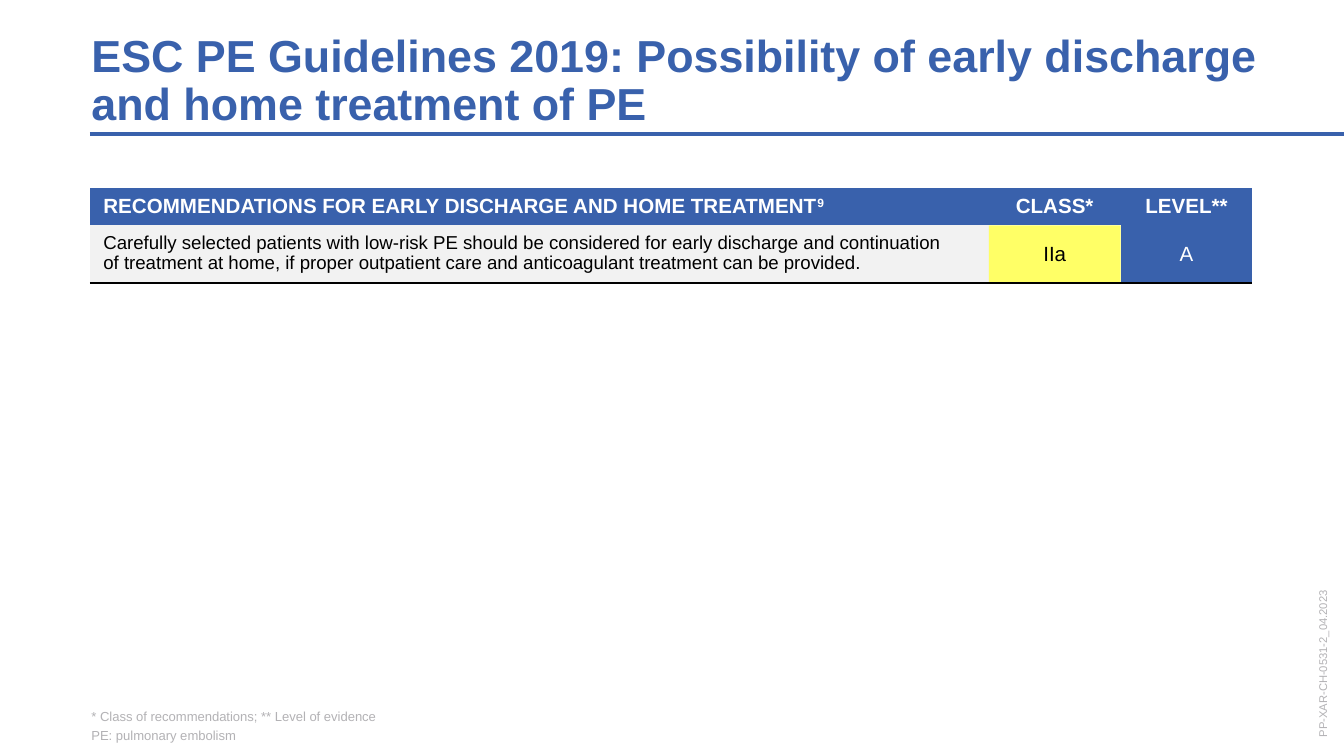
"""Build a slide with one guideline recommendation table."""
from lxml.etree import SubElement
from pptx import Presentation
from pptx.dml.color import RGBColor
from pptx.enum.shapes import MSO_CONNECTOR
from pptx.enum.text import MSO_ANCHOR, MSO_AUTO_SIZE, PP_ALIGN
from pptx.oxml import parse_xml
from pptx.oxml.ns import nsdecls, qn
from pptx.util import Pt

BLUE, GREY, WHITE, BLACK = "3961AC", "B3B2B5", "FFFFFF", "000000"


def color(code):
    return RGBColor.from_string(code)


def write(para, text, size, code, bold=False):
    for i, part in enumerate(text.split("\n")):
        if i:
            para.add_line_break()
        run = para.add_run()
        run.text = part
        run.font.name = "Arial"
        run.font.size = Pt(size)
        run.font.bold = bold
        run.font.color.rgb = color(code)
    return run


deck = Presentation()
deck.slide_width, deck.slide_height = Pt(720), Pt(405)
slide = deck.slides.add_slide(deck.slide_layouts[5])
shapes = slide.shapes

title = shapes.title
code = shapes.add_textbox(Pt(658), Pt(333.3), Pt(101), Pt(22.4))
code.rotation = 270
notes = shapes.add_textbox(Pt(49), Pt(379.5), Pt(623), Pt(18.7))
title.left, title.top, title.width, title.height = Pt(49), Pt(17.3), Pt(651.6), Pt(52.6)
for box, anchor in ((title, MSO_ANCHOR.BOTTOM), (code, MSO_ANCHOR.MIDDLE),
                    (notes, MSO_ANCHOR.BOTTOM)):
    frame = box.text_frame
    frame.margin_left = frame.margin_right = 0
    frame.margin_top = frame.margin_bottom = 0
    frame.word_wrap = True
    frame.auto_size = MSO_AUTO_SIZE.NONE
    frame.vertical_anchor = anchor

para = title.text_frame.paragraphs[0]
para.alignment = PP_ALIGN.LEFT
para.line_spacing = 0.9
para.space_before = Pt(0)
write(para, "ESC PE Guidelines 2019: Possibility of early discharge and home treatment of PE",
      24, BLUE, True)
write(code.text_frame.paragraphs[0], "PP-XAR-CH-0531-2_04.2023", 6, GREY)

frame = notes.text_frame
for i, text in enumerate(("* Class of recommendations; ** Level of evidence",
                          "PE: pulmonary embolism")):
    para = frame.add_paragraph() if i else frame.paragraphs[0]
    para.space_after = Pt(2)
    write(para, text, 7, GREY)

rule = shapes.add_connector(MSO_CONNECTOR.STRAIGHT, Pt(48.2), Pt(72), Pt(720), Pt(72))
rule.line.color.rgb = color(BLUE)
rule.line.width = Pt(2.25)
SubElement(rule._element.spPr, qn("a:effectLst"))

table = shapes.add_table(2, 3, Pt(48.2), Pt(100.8), Pt(622.8), Pt(51)).table
table.horz_banding = False
table._tbl.tblPr.find(qn("a:tableStyleId")).text = "{2D5ABB26-0587-4C30-8999-92F81FD0307C}"
for col, width in zip(table.columns, (481.6, 70.6, 70.6)):
    col.width = Pt(width)
for row, height in zip(table.rows, (20, 31)):
    row.height = Pt(height)

advice = ("Carefully selected patients with low-risk PE should be considered for early "
          "discharge and continuation \nof treatment at home, if proper outpatient care "
          "and anticoagulant treatment can be provided.")
head = "RECOMMENDATIONS FOR EARLY DISCHARGE AND HOME TREATMENT"
grid = (
    ((head, 11, WHITE, BLUE), ("CLASS*", 11, WHITE, BLUE), ("LEVEL**", 11, WHITE, BLUE)),
    ((advice, 10, BLACK, "F2F2F2"), ("IIa", 11, BLACK, "FFFF00"), ("A", 11, WHITE, BLUE)),
)
for r, line in enumerate(grid):
    for c, (text, size, ink, fill) in enumerate(line):
        cell = table.cell(r, c)
        cell.fill.solid()
        cell.fill.fore_color.rgb = color(fill)
        para = cell.text_frame.paragraphs[0]
        write(para, text, size, ink, r == 0)
        if c:
            para.alignment = PP_ALIGN.CENTER
        if r:
            if c:
                cell.vertical_anchor = MSO_ANCHOR.MIDDLE
            cell._tc.tcPr.insert(0, parse_xml(
                f'<a:lnB {nsdecls("a")} w="12700"><a:solidFill><a:srgbClr val="{BLACK}"/>'
                '</a:solidFill></a:lnB>'))

mark = write(table.cell(0, 0).text_frame.paragraphs[0], "9", 11, WHITE, True)
mark.font._element.set("baseline", "30000")
tint = table.cell(1, 1)._tc.tcPr.find(qn("a:solidFill")).find(qn("a:srgbClr"))
SubElement(tint, qn("a:alpha")).set("val", "60000")

deck.save("out.pptx")
